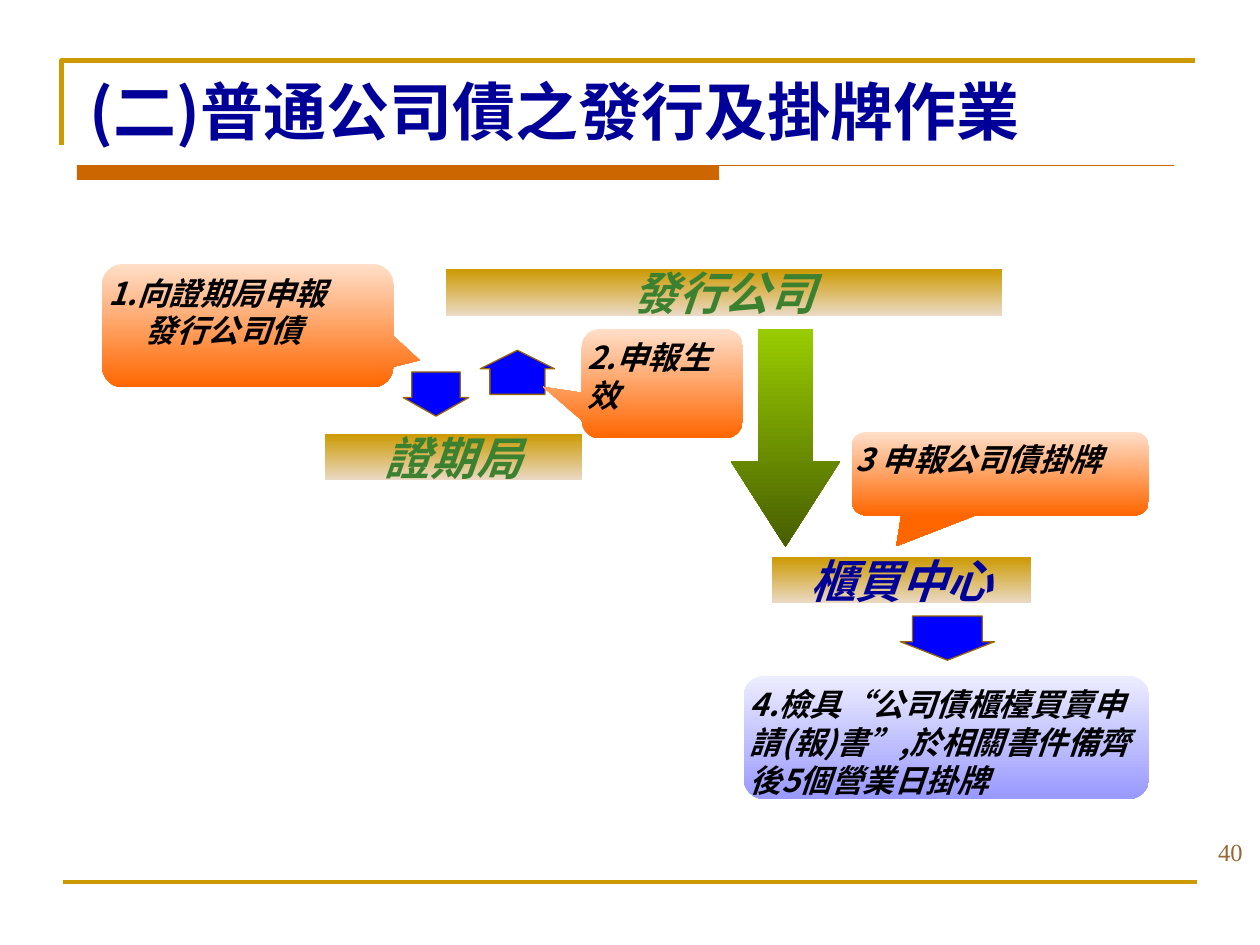
from lxml.etree import SubElement
from pptx import Presentation
from pptx.dml.color import RGBColor
from pptx.enum.shapes import MSO_CONNECTOR, MSO_SHAPE
from pptx.enum.text import MSO_ANCHOR, PP_ALIGN
from pptx.oxml.ns import qn
from pptx.util import Cm, Pt

WHITE = RGBColor(0xFF, 0xFF, 0xFF)
BLACK = RGBColor(0x00, 0x00, 0x00)
NAVY = RGBColor(0x00, 0x00, 0x99)
BLUE = RGBColor(0x00, 0x00, 0xFF)
GREEN = RGBColor(0x3B, 0x81, 0x2F)
GOLD = RGBColor(0xCC, 0x99, 0x00)
SAND = RGBColor(0xEB, 0xDB, 0xC9)
BROWN = RGBColor(0x99, 0x66, 0x00)
NUMBER_BROWN = RGBColor(0x99, 0x66, 0x33)
RUST = RGBColor(0xCC, 0x66, 0x00)
PEACH = RGBColor(0xFF, 0xDF, 0xC9)
ORANGE = RGBColor(0xFF, 0x66, 0x00)
LIME = RGBColor(0x99, 0xCC, 0x00)
OLIVE = RGBColor(0x47, 0x5E, 0x00)
PALE_LILAC = RGBColor(0xED, 0xED, 0xFF)
LILAC = RGBColor(0x99, 0x99, 0xFF)
CJK_FONT = "Noto Sans CJK SC"
NUMBER_FONT = "Times New Roman"


def style_para(para, size, color, name=CJK_FONT, bold=True, italic=True):
    """Set the Latin and East Asian font of a paragraph."""
    font = para.font
    font.size, font.name, font.bold, font.italic = Pt(size), name, bold, italic
    font.color.rgb = color
    defaults = para._p.pPr.find(qn("a:defRPr"))
    SubElement(defaults, qn("a:ea")).set("typeface", name)


def set_insets(frame, top=0):
    """Remove the text margins, apart from the top one."""
    frame.margin_left = frame.margin_right = frame.margin_bottom = 0
    frame.margin_top = Cm(top)


def add_box(page, kind, place, colors, line=None, adjustments=()):
    """Add a preset shape with a solid fill or a vertical gradient."""
    box = page.shapes.add_shape(kind, *map(Cm, place))
    box.shadow.inherit = False
    for index, value in enumerate(adjustments):
        box.adjustments[index] = value
    if len(colors) == 1:
        box.fill.solid()
        box.fill.fore_color.rgb = colors[0]
    else:
        box.fill.gradient()
        box.fill.gradient_angle = 270
        for stop, color in zip(box.fill.gradient_stops, colors):
            stop.color.rgb = color
    if line is None:
        box.line.fill.background()
    else:
        box.line.color.rgb = line
        box.line.width = Pt(0.75)
    return box


def add_party(page, left, top, width, name, color):
    """Add a gold bar that names one party."""
    box = add_box(page, MSO_SHAPE.RECTANGLE, (left, top, width, 0.96), (GOLD, SAND), WHITE)
    frame = box.text_frame
    set_insets(frame)
    frame.vertical_anchor = MSO_ANCHOR.MIDDLE
    para = frame.paragraphs[0]
    para.text = name
    para.alignment = PP_ALIGN.CENTER
    style_para(para, 26, color)


def add_step(page, kind, place, colors, adjustments, lines):
    """Add a rounded step box, with any second line indented."""
    box = add_box(page, kind, place, colors, adjustments=adjustments)
    frame = box.text_frame
    set_insets(frame, top=0.08)
    frame.word_wrap = True
    frame.vertical_anchor = MSO_ANCHOR.TOP
    for index, text in enumerate(lines):
        para = frame.add_paragraph() if index else frame.paragraphs[0]
        para.text = text
        para.alignment = PP_ALIGN.LEFT
        para.line_spacing = Pt(21.5)
        style_para(para, 18, BLACK)
        if index:
            para._p.pPr.set("marL", str(Cm(0.74)))


def add_small_arrow(page, left, top, width, rotation=0):
    """Add a blue block arrow."""
    arrow = add_box(page, MSO_SHAPE.DOWN_ARROW, (left, top, width, 0.89), (BLUE,), BROWN, (0.74, 0.42))
    arrow.rotation = rotation


def add_rule(page, left, right, top, color, width):
    """Add a horizontal line."""
    rule = page.shapes.add_connector(MSO_CONNECTOR.STRAIGHT, Cm(left), Cm(top), Cm(right), Cm(top))
    rule.line.color.rgb = color
    rule.line.width = Pt(width)
    SubElement(rule._element.spPr, qn("a:effectLst"))


def add_corner(page):
    """Add the gold corner line around the title."""
    builder = page.shapes.build_freeform(Cm(1.24), Cm(2.92))
    builder.add_line_segments([(Cm(1.24), Cm(1.22)), (Cm(24.1), Cm(1.22))], close=False)
    corner = builder.convert_to_shape()
    corner.shadow.inherit = False
    corner.fill.background()
    corner.line.color.rgb = GOLD
    corner.line.width = Pt(2.5)


def set_title(page, text):
    """Place and format the title."""
    title = page.shapes.title
    title.left, title.top, title.width, title.height = map(Cm, (1.55, 1.32, 21.64, 1.8))
    frame = title.text_frame
    frame.vertical_anchor = MSO_ANCHOR.MIDDLE
    para = frame.paragraphs[0]
    para.text = text
    para.alignment = PP_ALIGN.LEFT
    style_para(para, 36, NAVY, italic=False)


def add_page_number(page, number):
    """Add the page number at the lower right."""
    box = page.shapes.add_textbox(*map(Cm, (19.38, 16.33, 5.92, 1.27)))
    frame = box.text_frame
    frame.word_wrap = True
    frame.vertical_anchor = MSO_ANCHOR.BOTTOM
    para = frame.paragraphs[0]
    para.text = number
    para.alignment = PP_ALIGN.RIGHT
    style_para(para, 14, NUMBER_BROWN, NUMBER_FONT, bold=False, italic=False)


def main():
    """Build the slide and save the deck."""
    deck = Presentation()
    deck.slide_width, deck.slide_height = Cm(25.4), Cm(19.05)
    page = deck.slides.add_slide(deck.slide_layouts[5])

    add_corner(page)
    add_rule(page, 1.27, 24.13, 17.78, GOLD, 2)
    set_title(page, "(二)普通公司債之發行及掛牌作業")

    add_party(page, 8.97, 5.42, 11.25, "發行公司", GREEN)
    add_party(page, 6.54, 8.74, 5.2, "證期局", GREEN)
    add_party(page, 15.55, 11.22, 5.25, "櫃買中心", NAVY)

    add_small_arrow(page, 8.13, 7.5, 1.32)
    add_small_arrow(page, 9.68, 7.06, 1.5, rotation=180)
    add_small_arrow(page, 18.15, 12.42, 1.9)
    add_box(page, MSO_SHAPE.DOWN_ARROW, (14.73, 6.63, 2.21, 4.39), (LIME, OLIVE), adjustments=(0.5, 0.78))

    callouts = [
        ((2.06, 5.32, 5.87, 2.49), (0.59, 0.28), ["1.向證期局申報", "發行公司債"]),
        ((11.73, 6.63, 3.25, 2.21), (-0.74, 0.03), ["2.申報生效"]),
        ((17.17, 8.71, 5.99, 1.68), (-0.35, 0.87), ["3 申報公司債掛牌"]),
    ]
    for place, tip, lines in callouts:
        add_step(page, MSO_SHAPE.ROUNDED_RECTANGULAR_CALLOUT, place, (PEACH, ORANGE), (*tip, 0.17), lines)
    add_step(page, MSO_SHAPE.ROUNDED_RECTANGLE, (14.99, 13.62, 8.18, 2.49), (PALE_LILAC, LILAC), (0.17,),
             ["4.檢具“公司債櫃檯買賣申請(報)書”,於相關書件備齊後5個營業日掛牌"])

    add_box(page, MSO_SHAPE.RECTANGLE, (1.55, 3.33, 12.95, 0.3), (RUST,))
    add_rule(page, 1.55, 23.67, 3.33, RUST, 0.75)
    add_page_number(page, "40")
    deck.save("out.pptx")


if __name__ == "__main__":
    main()
